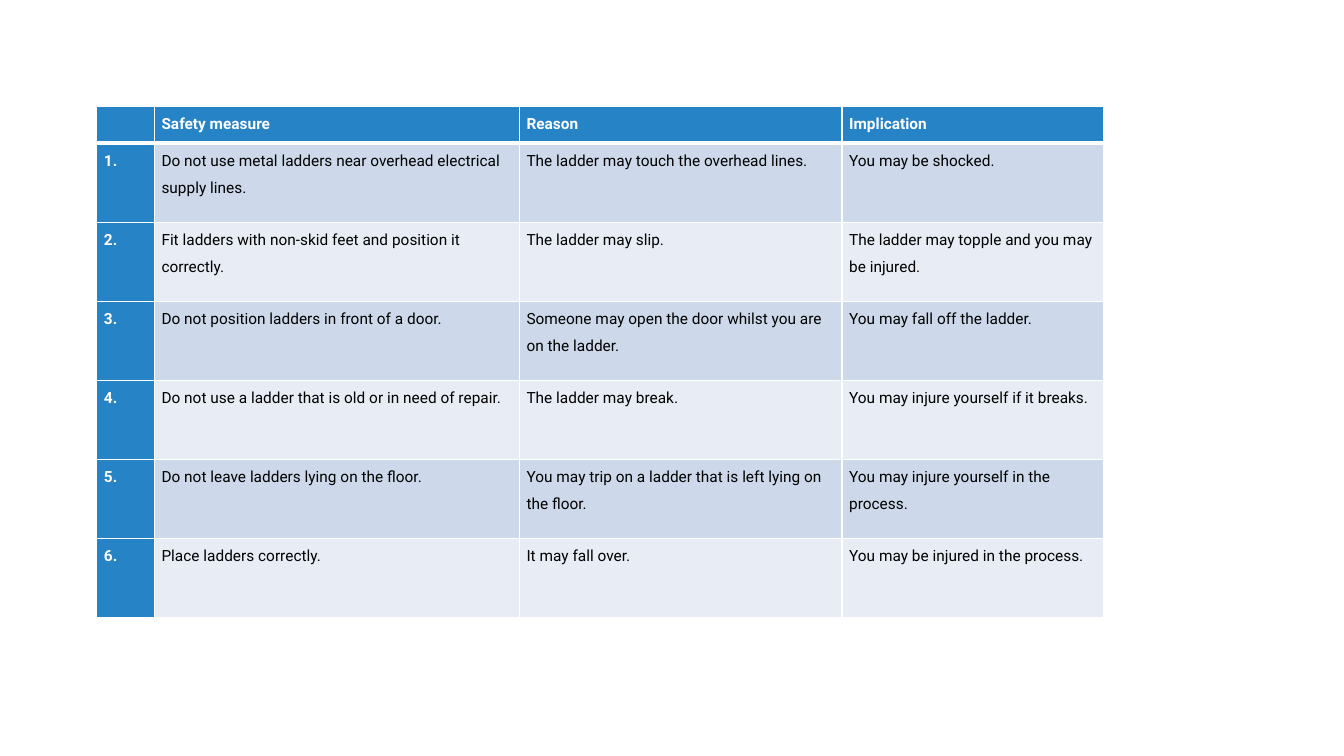
from lxml import etree
from pptx import Presentation
from pptx.dml.color import RGBColor
from pptx.oxml.ns import qn
from pptx.util import Cm, Pt

HEADINGS = ("", "Safety measure", "Reason", "Implication")
MEASURES = [
    ("Do not use metal ladders near overhead electrical supply lines.",
     "The ladder may touch the overhead lines.",
     "You may be shocked."),
    ("Fit ladders with non-skid feet and position it correctly.",
     "The ladder may slip.",
     "The ladder may topple and you may be injured."),
    ("Do not position ladders in front of a door.",
     "Someone may open the door whilst you are on the ladder.",
     "You may fall off the ladder."),
    ("Do not use a ladder that is old or in need of repair.",
     "The ladder may break.",
     "You may injure yourself if it breaks."),
    ("Do not leave ladders lying on the floor.",
     "You may trip on a ladder that is left lying on the floor.",
     "You may injure yourself in the process."),
    ("Place ladders correctly.",
     "It may fall over.",
     "You may be injured in the process."),
]
LEFT, TOP = 2.44, 2.67
COLUMN_WIDTHS = (1.45, 9.2, 8.13, 6.58)
HEADING_HEIGHT, MEASURE_HEIGHT = 0.94, 1.99
BLUE, WHITE, BLACK = "2683C6", "FFFFFF", "000000"
BANDS = ("CDD9EA", "E8EDF5")


def paint(color_format, color):
    color_format.rgb = RGBColor.from_string(color)


def write(cell, text, *, color=BLACK, bold=False, size=11, font="Roboto"):
    cell.margin_left = cell.margin_right = Cm(0.18)
    cell.margin_top = cell.margin_bottom = 0
    if not text:
        return
    para = cell.text_frame.paragraphs[0]
    para.line_spacing = 1.5
    para.space_after = Pt(3)
    span = para.add_run()
    span.text = text
    span.font.name, span.font.size, span.font.bold = font, Pt(size), bold
    paint(span.font.color, color)


def add_borders(cell, color=WHITE, **widths):
    """Add borders in points; the sides must come in the order L, R, T, B."""
    properties = cell._tc.get_or_add_tcPr()
    for side, width in widths.items():
        line = etree.SubElement(properties, qn(f"a:ln{side}"), w=str(Pt(width)))
        fill = etree.SubElement(line, qn("a:solidFill"))
        etree.SubElement(fill, qn("a:srgbClr"), val=color)


def main():
    deck = Presentation()
    deck.slide_width, deck.slide_height = Cm(33.87), Cm(19.05)
    page = deck.slides.add_slide(deck.slide_layouts[6])

    rows = [HEADINGS] + [(f"{number}.", *measure)
                         for number, measure in enumerate(MEASURES, 1)]
    heights = [HEADING_HEIGHT] + [MEASURE_HEIGHT] * len(MEASURES)
    table = page.shapes.add_table(
        len(rows), len(HEADINGS), Cm(LEFT), Cm(TOP),
        Cm(sum(COLUMN_WIDTHS)), Cm(sum(heights))).table
    table.first_col = True
    table.horz_banding = False
    for column, width in zip(table.columns, COLUMN_WIDTHS):
        column.width = Cm(width)

    for r, (texts, height) in enumerate(zip(rows, heights)):
        table.rows[r].height = Cm(height)
        for c, text in enumerate(texts):
            cell = table.cell(r, c)
            heading = r == 0 or c == 0
            write(cell, text, color=WHITE if heading else BLACK, bold=heading)
            add_borders(cell, L=1, R=1, T=3 if r == 1 else 1, B=3 if r == 0 else 1)
            cell.fill.solid()
            paint(cell.fill.fore_color, BLUE if heading else BANDS[(r - 1) % 2])

    deck.save("out.pptx")


if __name__ == "__main__":
    main()
